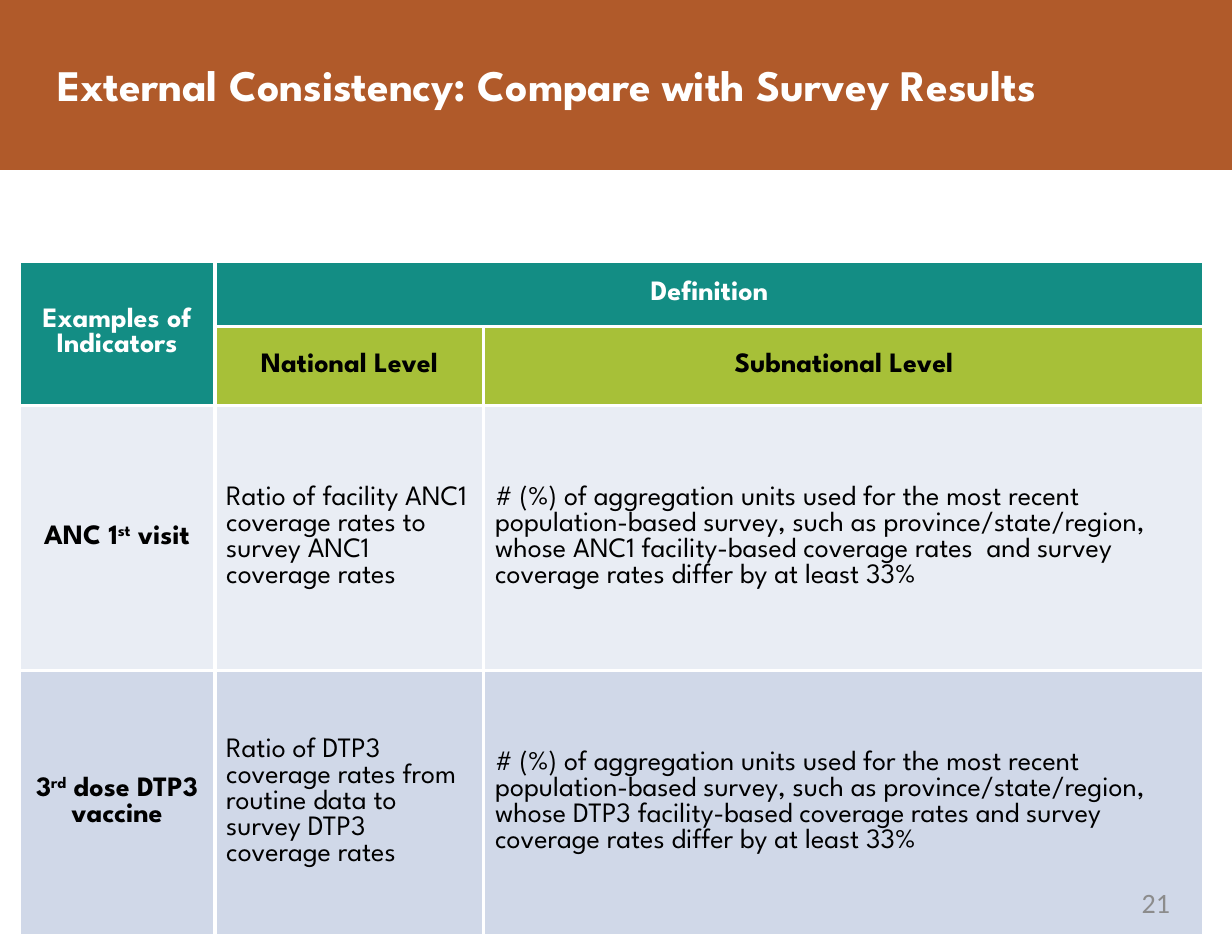
from dataclasses import dataclass

from lxml.etree import SubElement
from pptx import Presentation
from pptx.dml.color import RGBColor
from pptx.enum.shapes import MSO_SHAPE as Shape
from pptx.enum.text import MSO_ANCHOR as Anchor, PP_ALIGN as Align
from pptx.oxml.ns import qn
from pptx.slide import Slide
from pptx.util import Emu, Pt

PX_PER_INCH = 112


@dataclass(frozen=True)
class Theme:
    heading_font: str = "League Spartan"
    number_font: str = "Calibri"
    title_size: int = 28
    body_size: int = 18
    border_width: float = 2.25
    white: str = "FFFFFF"
    black: str = "000000"
    gray: str = "8C8C8C"
    rust: str = "B05A2A"
    teal: str = "138D84"
    lime: str = "A7C038"
    pale: str = "E9EDF4"
    blue: str = "D0D8E8"


THEME = Theme()


@dataclass(frozen=True)
class Area:
    left: int
    top: int
    width: int
    height: int

    def emu(self) -> tuple:
        return tuple(px(n) for n in (self.left, self.top, self.width, self.height))


@dataclass(frozen=True)
class Entry:
    row: int
    column: int
    text: str
    fill: str
    color: str = THEME.black
    bold: bool = True
    align: Align = Align.CENTER
    row_span: int = 1
    column_span: int = 1


def px(length: int) -> Emu:
    return Emu(round(length * 914400 / PX_PER_INCH))


def write_text(frame, text: str, *, font: str = THEME.heading_font,
               size: int = THEME.body_size, color: str = THEME.black,
               bold: bool = False, align: Align = Align.LEFT) -> None:
    para = frame.paragraphs[0]
    para.alignment = align
    for index, part in enumerate(text.split("^")):
        span = para.add_run()
        span.text = part
        span.font.name = font
        span.font.size = Pt(size)
        span.font.bold = bold
        span.font.color.rgb = RGBColor.from_string(color)
        if index % 2:
            span._r.get_or_add_rPr().set("baseline", "30000")


def add_band(page: Slide, area: Area, color: str) -> None:
    band = page.shapes.add_shape(Shape.RECTANGLE, *area.emu())
    band.shadow.inherit = False
    band.fill.solid()
    band.fill.fore_color.rgb = RGBColor.from_string(color)
    band.line.fill.background()


def add_label(page: Slide, area: Area, text: str, anchor: Anchor, **style) -> None:
    frame = page.shapes.add_textbox(*area.emu()).text_frame
    frame.word_wrap = True
    frame.vertical_anchor = anchor
    frame.margin_left = frame.margin_right = 0
    frame.margin_top = frame.margin_bottom = 0
    write_text(frame, text, **style)


def style_cell(cell, fill: str) -> None:
    properties = cell._tc.get_or_add_tcPr()
    for side in ("a:lnL", "a:lnR", "a:lnT", "a:lnB"):
        line = SubElement(properties, qn(side), w=str(Pt(THEME.border_width)))
        paint = SubElement(line, qn("a:solidFill"))
        SubElement(paint, qn("a:srgbClr"), val=THEME.white)
    cell.fill.solid()
    cell.fill.fore_color.rgb = RGBColor.from_string(fill)
    cell.vertical_anchor = Anchor.MIDDLE


def add_grid(page: Slide, left: int, top: int, widths: list[int],
             heights: list[int], entries: list[Entry]) -> None:
    area = Area(left, top, sum(widths), sum(heights))
    table = page.shapes.add_table(len(heights), len(widths), *area.emu()).table
    table.first_row = table.horz_banding = False
    for column, width in zip(table.columns, widths):
        column.width = px(width)
    for row, height in zip(table.rows, heights):
        row.height = px(height)
    for entry in entries:
        last_row = entry.row + entry.row_span
        last_column = entry.column + entry.column_span
        for row in range(entry.row, last_row):
            for column in range(entry.column, last_column):
                style_cell(table.cell(row, column), entry.fill)
        cell = table.cell(entry.row, entry.column)
        if entry.row_span * entry.column_span > 1:
            cell.merge(table.cell(last_row - 1, last_column - 1))
        write_text(cell.text_frame, entry.text, color=entry.color,
                   bold=entry.bold, align=entry.align)


def indicator_row(row: int, fill: str, name: str, national: str,
                  subnational: str) -> list[Entry]:
    details = [Entry(row, column, text, fill, bold=False, align=Align.LEFT)
               for column, text in enumerate((national, subnational), 1)]
    return [Entry(row, 0, name, fill), *details]


def subnational_text(comparison: str) -> str:
    return ("# (%) of aggregation units used for the most recent "
            "population-based survey, such as province/state/region, "
            f"whose {comparison} survey coverage rates differ by at least 33%")


def main() -> None:
    deck = Presentation()
    deck.slide_width, deck.slide_height = px(1232), px(952)
    page = deck.slides.add_slide(deck.slide_layouts[6])

    add_band(page, Area(0, 0, 1232, 170), THEME.rust)
    add_label(page, Area(57, 57, 1109, 53),
              "External Consistency: Compare with Survey Results",
              Anchor.BOTTOM, size=THEME.title_size, color=THEME.white, bold=True)

    entries = [
        Entry(0, 0, "Examples of Indicators", THEME.teal, THEME.white, row_span=2),
        Entry(0, 1, "Definition", THEME.teal, THEME.white, column_span=2),
        Entry(1, 1, "National Level", THEME.lime),
        Entry(1, 2, "Subnational Level", THEME.lime),
        *indicator_row(
            2, THEME.pale, "ANC 1^st^ visit",
            "Ratio of facility ANC1 coverage rates to survey ANC1 coverage rates",
            subnational_text("ANC1 facility-based coverage rates  and")),
        *indicator_row(
            3, THEME.blue, "3^rd^ dose DTP3 vaccine",
            "Ratio of DTP3 coverage rates from routine data to survey DTP3 coverage rates",
            subnational_text("DTP3 facility-based coverage rates and")),
    ]
    add_grid(page, 19, 261, [196, 269, 720], [66, 66, 265, 265], entries)

    add_label(page, Area(887, 886, 283, 47), "21", Anchor.TOP,
              font=THEME.number_font, color=THEME.gray, align=Align.RIGHT)
    deck.save("out.pptx")


if __name__ == "__main__":
    main()
